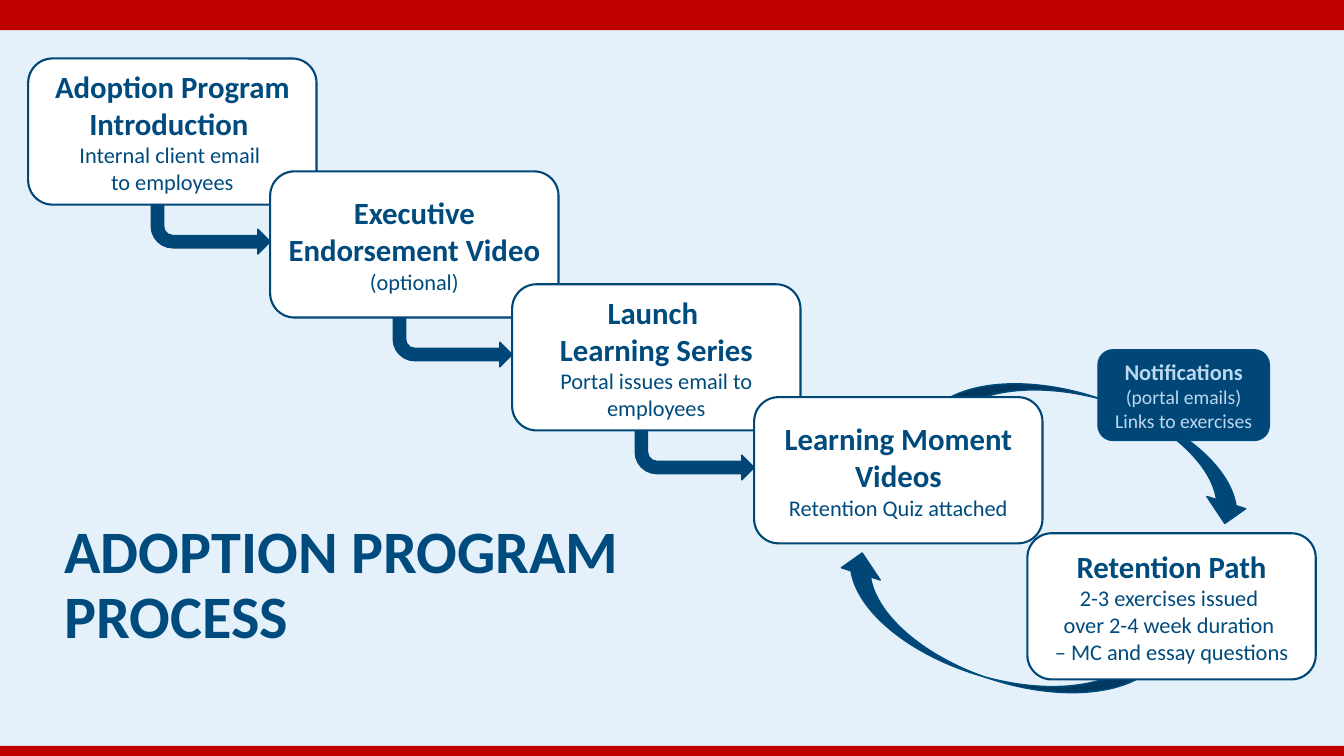
from pptx import Presentation
from pptx import util as u
from pptx.dml.color import RGBColor
from pptx.enum import shapes, text

NAVY, INK, PALE, WHITE, RED = "004778", "004B7D", "BDD7EE", "FFFFFF", "C00000"
BACKDROP = "E5F1FA"
FONT = "Calibri"

# Content: heading lines, detail lines
TITLE = ["ADOPTION PROGRAM", "PROCESS"]
STEPS = [
    (["Adoption Program Introduction "], ["Internal client email ", "to employees"]),
    (["Executive Endorsement Video"], ["(optional)"]),
    (["Launch ", "Learning Series"], ["Portal issues email to employees"]),
    (["Learning Moment Videos"], ["Retention Quiz attached"]),
]
RETENTION = (["Retention Path"],
             ["2-3 exercises issued ", "over 2-4 week duration ", "– MC and essay questions"])
NOTICES = (["Notifications"], ["(portal emails) Links to exercises"])

# Layout in inches
BOX_W, BOX_H = 2.86, 1.45
LEFT, TOP, STEP_X, STEP_Y = 0.28, 0.58, 2.4, 1.12
ARROW_W, ARROW_H = 1.18, 0.49
LOOP_W, LOOP_H, LOOP_TILT = 3.35, 0.81, 17.5

prs = Presentation()
prs.slide_width, prs.slide_height = u.Inches(13.33), u.Inches(7.5)
s = prs.slides.add_slide(prs.slide_layouts[5])


def color(hex_code):
    return RGBColor.from_string(hex_code)


def add_shape(kind, x, y, w, h, fill, line=None, line_w=1):
    sp = s.shapes.add_shape(kind, *map(u.Inches, (x, y, w, h)))
    sp.shadow.inherit = False
    sp.fill.solid()
    sp.fill.fore_color.rgb = color(fill)
    if line:
        sp.line.color.rgb = color(line)
        sp.line.width = u.Pt(line_w)
    else:
        sp.line.fill.background()
    return sp


def add_run(p, words, size, ink, bold):
    r = p.add_run()
    r.text = words
    r.font.name, r.font.size, r.font.bold = FONT, u.Pt(size), bold
    r.font.color.rgb = color(ink)


def add_box(content, x, y, w=BOX_W, h=BOX_H, fill=WHITE, line=NAVY, line_w=1.5,
            ink=INK, sizes=(22, 16)):
    sp = add_shape(shapes.MSO_SHAPE.ROUNDED_RECTANGLE, x, y, w, h, fill, line, line_w)
    tf = sp.text_frame
    tf.word_wrap = True
    tf.vertical_anchor = text.MSO_ANCHOR.MIDDLE
    p = tf.paragraphs[0]
    p.alignment = text.PP_ALIGN.CENTER
    heading, details = content
    for i, words in enumerate(heading + details):
        if i:
            p.add_line_break()
        bold = i < len(heading)
        add_run(p, words, sizes[0] if bold else sizes[1], ink, bold)


def add_arrow(kind, x, y, w, h, flip, line=NAVY, tilt=0):
    sp = add_shape(kind, x, y, w, h, NAVY, line)
    sp.rotation = tilt
    sp.element.spPr.xfrm.set(flip, "1")


def add_loop(x, y, flip):
    add_arrow(shapes.MSO_SHAPE.CURVED_UP_ARROW, x, y, LOOP_W, LOOP_H, flip, INK, LOOP_TILT)


def step_at(i):
    return LEFT + i * STEP_X, TOP + i * STEP_Y


# Background and bars
s.background.fill.solid()
s.background.fill.fore_color.rgb = color(BACKDROP)
for y, h in ((7.4, 0.1), (0, 0.3)):
    add_shape(shapes.MSO_SHAPE.RECTANGLE, 0, y, 13.33, h, RED)

# Title
title = s.shapes.title
title.left, title.top, title.width, title.height = map(u.Inches, (0.54, 5.06, 6.4, 1.45))
tf = title.text_frame
tf.word_wrap = True
tf.auto_size = text.MSO_AUTO_SIZE.NONE
tf.vertical_anchor = text.MSO_ANCHOR.BOTTOM
for i, words in enumerate(TITLE):
    p = tf.add_paragraph() if i else tf.paragraphs[0]
    p.alignment = text.PP_ALIGN.LEFT
    p.line_spacing = 0.9
    p.space_before = u.Pt(0)
    add_run(p, words, 43, INK, True)

# Staircase: each arrow drops from one box and ends at the next
add_box(STEPS[0], *step_at(0))
for i in range(len(STEPS) - 1):
    add_arrow(shapes.MSO_SHAPE.BENT_ARROW, step_at(i + 1)[0] - ARROW_W,
              step_at(i)[1] + BOX_H, ARROW_W, ARROW_H, "flipV")
add_loop(8.16, 5.91, "flipH")
for i in (1, 2):
    add_box(STEPS[i], *step_at(i))

# Retention loop, with the last step in front of its arrow
add_box(RETENTION, 10.19, 5.29)
add_loop(9.19, 3.96, "flipV")
add_box(STEPS[3], *step_at(3))
add_box(NOTICES, 10.89, 3.47, 1.7, 0.9, NAVY, INK, 1, PALE, (16, 14))

prs.save("out.pptx")
